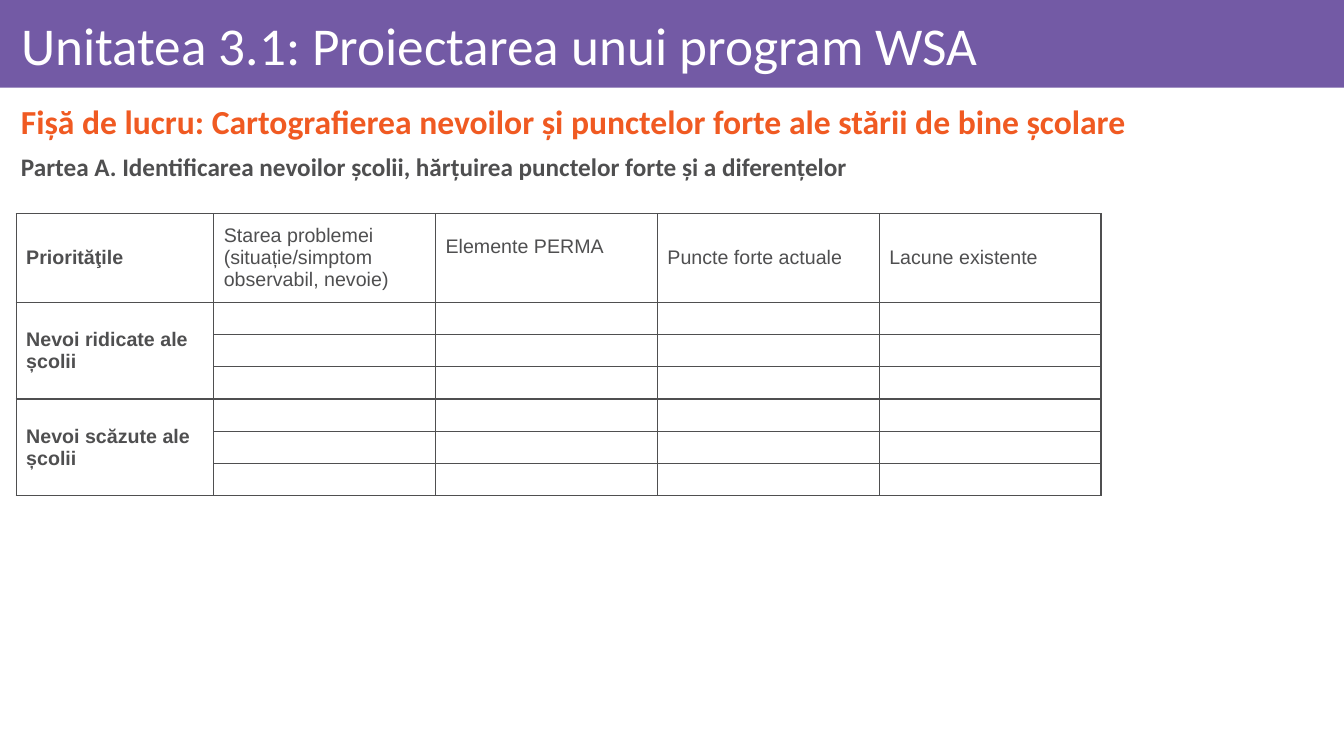
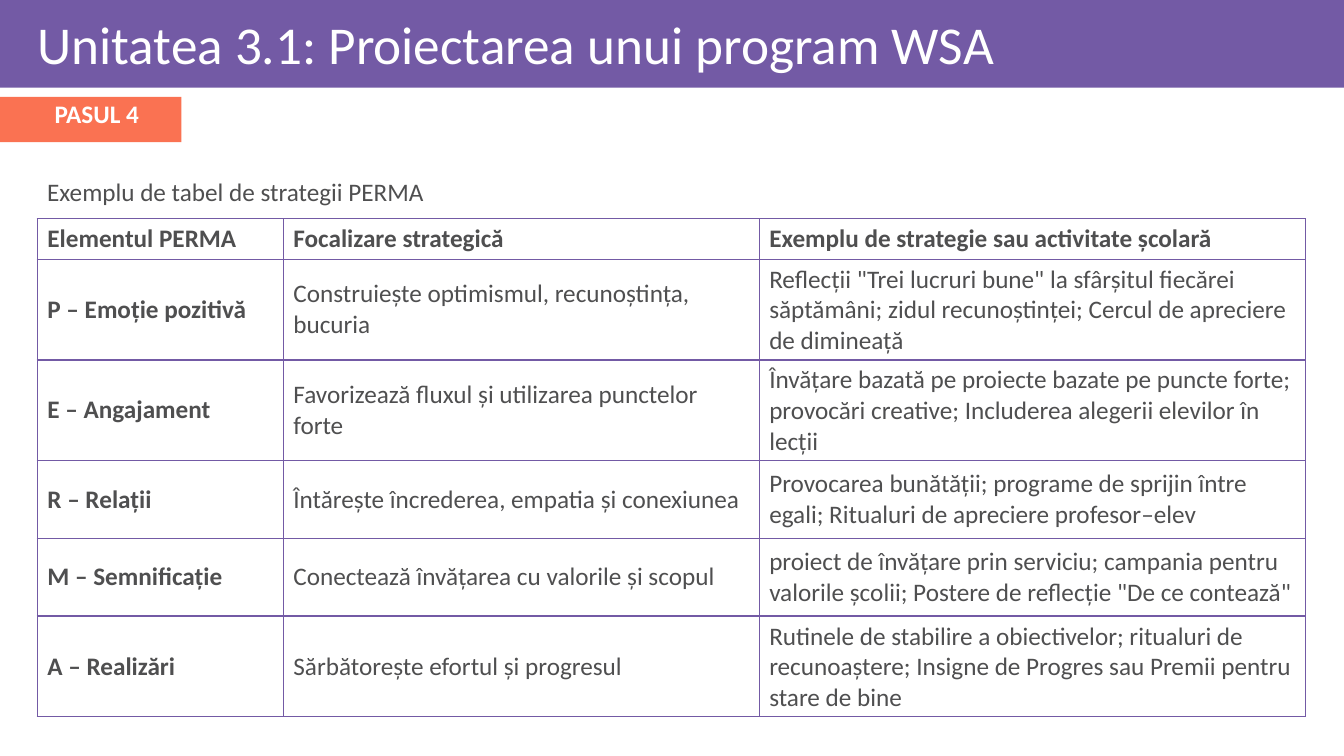
from dataclasses import dataclass

from lxml.etree import SubElement
from pptx import Presentation
from pptx.dml.color import RGBColor
from pptx.enum.shapes import MSO_SHAPE
from pptx.enum.text import MSO_ANCHOR, MSO_AUTO_SIZE, PP_ALIGN
from pptx.oxml.ns import qn
from pptx.util import Inches, Pt


@dataclass(frozen=True)
class Theme:
    purple: RGBColor = RGBColor(0x73, 0x5A, 0xA5)
    orange: RGBColor = RGBColor(0xF0, 0x5A, 0x22)
    coral: RGBColor = RGBColor(0xFA, 0x72, 0x52)
    grey: RGBColor = RGBColor(0x4F, 0x4F, 0x50)
    white: RGBColor = RGBColor(0xFF, 0xFF, 0xFF)
    font: str = "Calibri"
    worksheet_font: str = "Arial"
    title_size: Pt = Pt(38)
    heading_size: Pt = Pt(24)
    text_size: Pt = Pt(18)
    worksheet_size: Pt = Pt(14)
    border_width: Pt = Pt(1)


THEME = Theme()
TITLE = "Unitatea 3.1: Proiectarea unui program WSA"
TITLE_FONT = {"name": THEME.font, "size": THEME.title_size, "bold": False}
BODY_FONT = {"name": THEME.font, "size": THEME.text_size, "bold": False}
WORKSHEET_FONT = {"name": THEME.worksheet_font, "size": THEME.worksheet_size}


def write(frame, text, font, color, frame_format=None, paragraph_format=None):
    """Put one formatted paragraph into a text frame."""
    paragraph = frame.paragraphs[0]
    run = paragraph.add_run()
    run.text = text
    run.font.color.rgb = color
    for target, formats in (
        (frame, {"word_wrap": True, **(frame_format or {})}),
        (paragraph, paragraph_format or {}),
        (run.font, font),
    ):
        for name, value in formats.items():
            setattr(target, name, value)


def add_grid(slide, place, widths, heights, rows, font, border, bold_header):
    """Add a bordered, unfilled table whose first column is bold."""
    table = slide.shapes.add_table(
        len(heights), len(widths), *map(Inches, place), Inches(sum(widths)), Inches(sum(heights))
    ).table
    table.first_row = table.horz_banding = False
    for column, width in zip(table.columns, widths):
        column.width = Inches(width)
    for row, height in zip(table.rows, heights):
        row.height = Inches(height)

    for row_index, texts in enumerate(rows):
        for column_index, text in enumerate(texts):
            cell = table.cell(row_index, column_index)
            cell.vertical_anchor = MSO_ANCHOR.MIDDLE
            properties = cell._tc.get_or_add_tcPr()
            for side in ("lnL", "lnR", "lnT", "lnB"):
                line = SubElement(properties, qn(f"a:{side}"), w=str(THEME.border_width))
                SubElement(SubElement(line, qn("a:solidFill")), qn("a:srgbClr"), val=str(border))
            cell.fill.background()
            if text:
                bold = column_index == 0 or (bold_header and row_index == 0)
                write(cell.text_frame, text, {**font, "bold": bold}, THEME.grey)
            else:
                # An empty cell takes its line height from the end mark
                SubElement(cell.text_frame.paragraphs[0]._p, qn("a:endParaRPr"), sz="1200")
    return table


presentation = Presentation()
presentation.slide_width = Inches(13.33)
presentation.slide_height = Inches(7.5)
layout = presentation.slide_layouts[5]

# Slides with their shared title
slides = []
for left, top in ((0.11, 0.09), (0.27, 0.08)):
    slide = presentation.slides.add_slide(layout)
    title = slide.shapes.title
    title.left, title.top = Inches(left), Inches(top)
    title.width, title.height = Inches(13.06), Inches(0.78)
    write(
        title.text_frame, TITLE, TITLE_FONT, THEME.white,
        {
            "auto_size": MSO_AUTO_SIZE.NONE,
            "vertical_anchor": MSO_ANCHOR.MIDDLE,
            "margin_left": Inches(0.1),
            "margin_right": Inches(0.06),
            "margin_top": Inches(0.06),
            "margin_bottom": Inches(0.06),
        },
        {"alignment": PP_ALIGN.LEFT, "line_spacing": 0.9},
    )
    slides.append(slide)
worksheet_slide, strategy_slide = slides

# Title band, moved to the layout so that both slides show it; step label
for slide, top, width, height, color in (
    (worksheet_slide, 0, 13.33, 0.87, THEME.purple),
    (strategy_slide, 0.96, 1.8, 0.45, THEME.coral),
):
    band = slide.shapes.add_shape(
        MSO_SHAPE.RECTANGLE, 0, Inches(top), Inches(width), Inches(height)
    )
    band.shadow.inherit = False
    band.fill.solid()
    band.fill.fore_color.rgb = color
    band.line.fill.background()
    if slide is worksheet_slide:
        layout.shapes._spTree.insert(2, band._element)

# Text lines
NO_MARGINS = {f"margin_{side}": 0 for side in ("left", "right", "top", "bottom")}
BOLD_FONT = {**BODY_FONT, "bold": True}
for slide, place, text, font, color, frame_format, paragraph_format in (
    (
        worksheet_slide, (0.11, 0.93, 13.06, 0.6),
        "Fișă de lucru: Cartografierea nevoilor și punctelor forte ale stării de bine școlare",
        {**BOLD_FONT, "size": THEME.heading_size}, THEME.orange,
        {"vertical_anchor": MSO_ANCHOR.MIDDLE},
        {"alignment": PP_ALIGN.JUSTIFY, "line_spacing": 0.9},
    ),
    (
        worksheet_slide, (0.11, 1.45, 8.73, 0.4),
        "Partea A. Identificarea nevoilor școlii, hărțuirea punctelor forte și a diferențelor",
        BOLD_FONT, THEME.grey, {}, {},
    ),
    (
        strategy_slide, (0.53, 1.08, 0.86, 0.21), "PASUL 4", BOLD_FONT, THEME.white,
        NO_MARGINS, {"alignment": PP_ALIGN.CENTER, "line_spacing": Pt(14.4)},
    ),
    (
        strategy_slide, (0.37, 1.7, 6.67, 0.4), "Exemplu de tabel de strategii PERMA",
        BODY_FONT, THEME.grey, {}, {},
    ),
):
    box = slide.shapes.add_textbox(*map(Inches, place))
    write(box.text_frame, text, font, color, frame_format, paragraph_format)

# Worksheet: three empty lines for each level of need
worksheet_rows = [[
    "Priorităţile",
    "Starea problemei (situație/simptom observabil, nevoie)",
    "Elemente PERMA",
    "Puncte forte actuale",
    "Lacune existente",
]]
LINES_PER_NEED = 3
for need in ("Nevoi ridicate ale școlii", "Nevoi scăzute ale școlii"):
    worksheet_rows.append([need] + [""] * 4)
    worksheet_rows += [[""] * 5 for _ in range(LINES_PER_NEED - 1)]
worksheet = add_grid(
    worksheet_slide, (0.16, 2.12), [1.96] + [2.2] * 4, [0.88] + [0.32] * 6,
    worksheet_rows, WORKSHEET_FONT, THEME.grey, bold_header=False,
)
for first in range(1, len(worksheet_rows), LINES_PER_NEED):
    worksheet.cell(first, 0).merge(worksheet.cell(first + LINES_PER_NEED - 1, 0))
worksheet.cell(0, 2).margin_bottom = Inches(0.27)

# Strategies for each PERMA element
strategy_rows = [
    ("Elementul PERMA", "Focalizare strategică", "Exemplu de strategie sau activitate școlară"),
    (
        "P – Emoție pozitivă",
        "Construiește optimismul, recunoștința, bucuria",
        'Reflecții "Trei lucruri bune" la sfârșitul fiecărei săptămâni; '
        "zidul recunoștinței; Cercul de apreciere de dimineață",
    ),
    (
        "E – Angajament",
        "Favorizează fluxul și utilizarea punctelor forte",
        "Învățare bazată pe proiecte bazate pe puncte forte; "
        "provocări creative; Includerea alegerii elevilor în lecții",
    ),
    (
        "R – Relații",
        "Întărește încrederea, empatia și conexiunea",
        "Provocarea bunătății; programe de sprijin între egali; "
        "Ritualuri de apreciere profesor–elev",
    ),
    (
        "M – Semnificație",
        "Conectează învățarea cu valorile și scopul",
        "proiect de învățare prin serviciu; campania pentru valorile școlii; "
        'Postere de reflecție "De ce contează"',
    ),
    (
        "A – Realizări",
        "Sărbătorește efortul și progresul",
        "Rutinele de stabilire a obiectivelor; ritualuri de recunoaștere; "
        "Insigne de Progres sau Premii pentru stare de bine",
    ),
]
add_grid(
    strategy_slide, (0.37, 2.17), [2.44, 4.72, 5.42], [0.4, 1, 1, 0.77, 0.77, 1],
    strategy_rows, BODY_FONT, THEME.purple, bold_header=True,
)

presentation.save("out.pptx")
